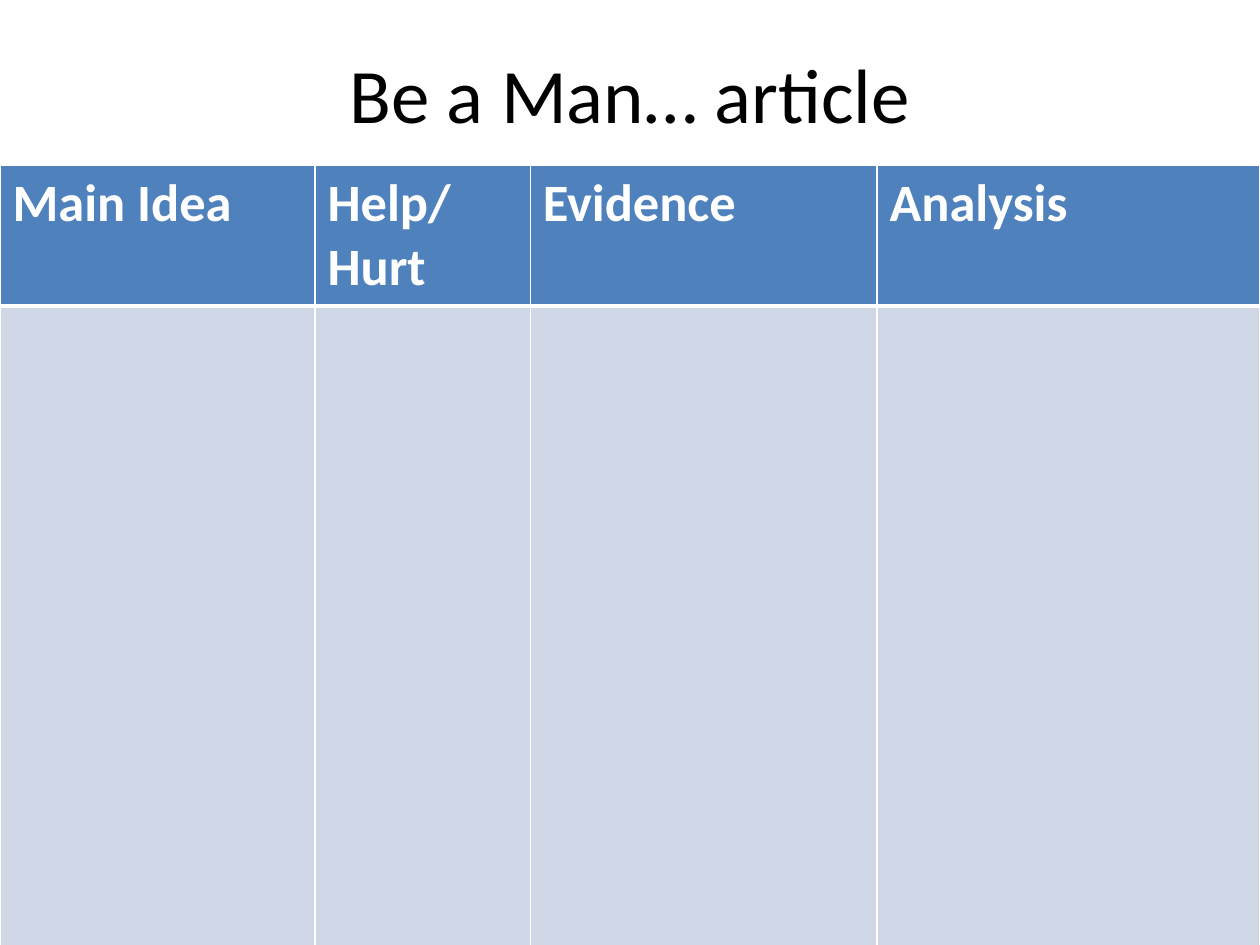
"""Build the article note-taking slide: a title above a four-column table."""
from lxml import etree
from pptx import Presentation
from pptx.dml.color import RGBColor
from pptx.enum import text
from pptx.oxml import ns
from pptx.util import Cm, Pt

TITLE = "Be a Man… article"
COLUMNS = [("Main Idea", 6.35), ("Help/Hurt", 4.34), ("Evidence", 6.99), ("Analysis", 7.72)]
ROW_HEIGHTS = [1.65, 15.57]

BLACK = RGBColor(0x00, 0x00, 0x00)
WHITE = RGBColor(0xFF, 0xFF, 0xFF)
BLUE = RGBColor(0x4F, 0x81, 0xBD)
PALE = RGBColor(0xD0, 0xD8, 0xE8)

ROW_FILLS = [BLUE, PALE]
ROW_BORDERS = [{"lnL": 1, "lnR": 1, "lnT": 1, "lnB": 3},
               {"lnL": 1, "lnR": 1, "lnT": 3, "lnB": 1}]
TITLE_FONT = {"name": "Calibri", "size": Pt(44), "bold": False}
HEADER_FONT = {"name": "Calibri", "size": Pt(30), "bold": True}


def write(tf, words, font, color):
    r = tf.paragraphs[0].add_run()
    r.text = words
    for key, value in font.items():
        setattr(r.font, key, value)
    r.font.color.rgb = color


def add_borders(cell, widths):
    tc_pr = cell._tc.get_or_add_tcPr()
    for i, (side, width) in enumerate(widths.items()):
        ln = etree.Element(ns.qn(f"a:{side}"), w=str(Pt(width)))
        fill = etree.SubElement(ln, ns.qn("a:solidFill"))
        etree.SubElement(fill, ns.qn("a:srgbClr"), val=str(WHITE))
        tc_pr.insert(i, ln)


def main():
    prs = Presentation()
    prs.slide_width, prs.slide_height = Cm(25.4), Cm(19.05)
    s = prs.slides.add_slide(prs.slide_layouts[5])

    title = s.shapes.title
    box = {"left": 1.27, "top": 0.28, "width": 22.86, "height": 3.18}
    for key, value in box.items():
        setattr(title, key, Cm(value))
    tf = title.text_frame
    tf.vertical_anchor = text.MSO_ANCHOR.MIDDLE
    tf.paragraphs[0].alignment = text.PP_ALIGN.CENTER
    write(tf, TITLE, TITLE_FONT, BLACK)

    table = s.shapes.add_table(len(ROW_HEIGHTS), len(COLUMNS), Cm(0), Cm(3.33),
                               Cm(25.4), Cm(sum(ROW_HEIGHTS))).table
    for column, (heading, width) in zip(table.columns, COLUMNS):
        column.width = Cm(width)
    for row, height, fill, borders in zip(table.rows, ROW_HEIGHTS, ROW_FILLS, ROW_BORDERS):
        row.height = Cm(height)
        for cell in row.cells:
            cell.fill.solid()
            cell.fill.fore_color.rgb = fill
            add_borders(cell, borders)
    for cell, (heading, width) in zip(table.rows[0].cells, COLUMNS):
        write(cell.text_frame, heading, HEADER_FONT, WHITE)

    prs.save("out.pptx")


if __name__ == "__main__":
    main()
